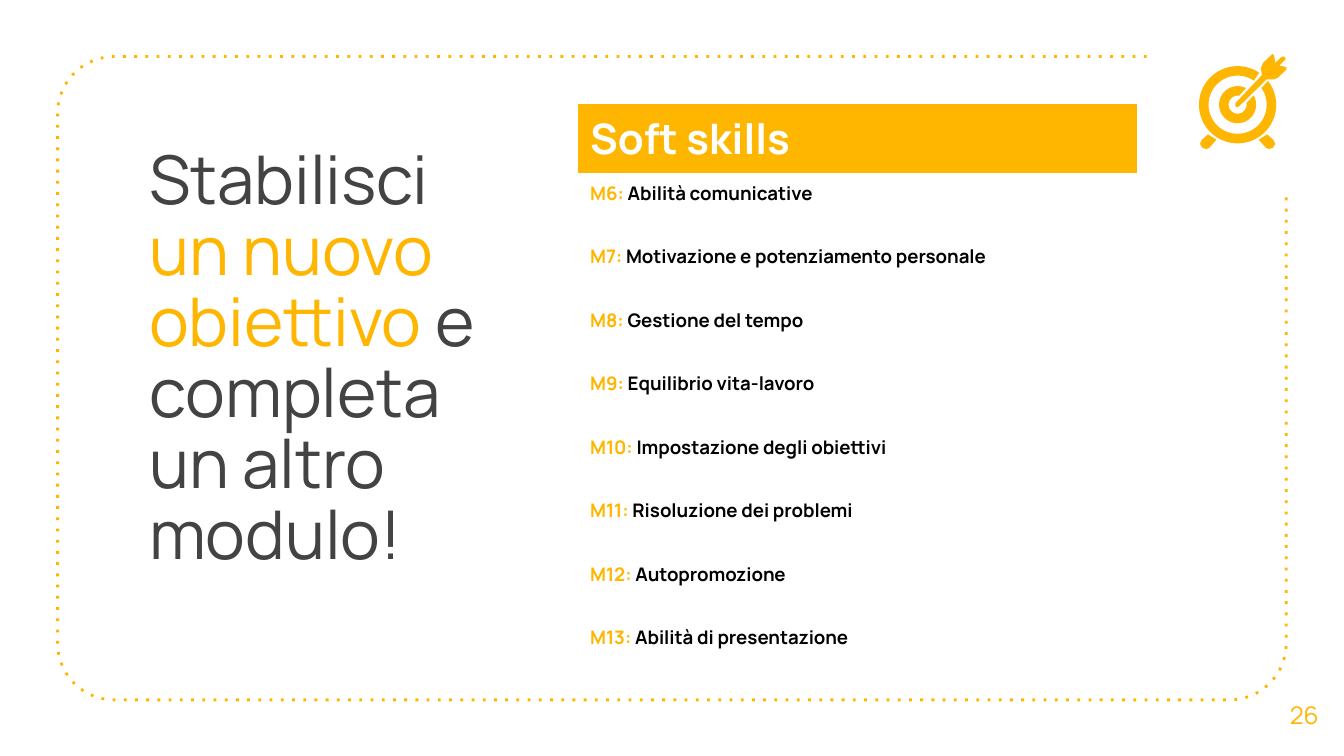
from math import cos, radians, sin

from lxml.etree import SubElement
from pptx import Presentation
from pptx.dml.color import RGBColor as RGB
from pptx.enum.text import MSO_ANCHOR as ANCHOR, PP_ALIGN as ALIGN
from pptx.oxml.ns import qn
from pptx.util import Cm, Pt

COLORS = {"accent": "FFB600", "text": "434343", "black": "000000", "white": "FFFFFF"}
FONT = "Manrope"

MODULES = [
    "Abilità comunicative",
    "Motivazione e potenziamento personale",
    "Gestione del tempo",
    "Equilibrio vita-lavoro",
    "Impostazione degli obiettivi",
    "Risoluzione dei problemi",
    "Autopromozione",
    "Abilità di presentazione",
]
FIRST_MODULE = 6

TARGET = (23.39, 1.98)
FOOT = [(-.56, .56), (-.68, .67), (-.71, .74), (-.67, .81),
        (-.59, .84), (-.53, .81), (-.4, .66)]
ARROW = [(.66, -.96), (.48, -.79), (.44, -.69), (.46, -.56), (-.04, -.03),
         (-.04, .02), (-.01, .05), (.03, .03), (.55, -.48), (.69, -.48),
         (.76, -.51), (.92, -.66), (.92, -.71), (.79, -.74), (.91, -.86),
         (.89, -.91), (.84, -.91), (.71, -.79), (.69, -.93)]


def color(name):
    return RGB.from_string(COLORS[name])


def arc(cx, cy, radius, start, end, steps):
    angles = [radians(start + (end - start) * i / steps) for i in range(steps + 1)]
    return [(cx + radius * cos(a), cy - radius * sin(a)) for a in angles]


def add_outline(slide, points, close=True):
    first, *rest = [(Cm(x), Cm(y)) for x, y in points]
    builder = slide.shapes.build_freeform(*first)
    builder.add_line_segments(rest, close=close)
    sp = builder.convert_to_shape()
    sp.shadow.inherit = False
    return sp


def add_frame(slide):
    left, top, right, bottom, radius = 1.09, 1.07, 24.31, 13.23, 1.07
    points = [(21.67, top)]
    points += arc(left + radius, top + radius, radius, 90, 180, 16)
    points += arc(left + radius, bottom - radius, radius, 180, 270, 16)
    points += arc(right - radius, bottom - radius, radius, 270, 360, 16)
    points += [(right, 3.71)]
    sp = add_outline(slide, points, close=False)
    sp.fill.background()
    sp.line.color.rgb = color("accent")
    sp.line.width = Pt(1.5)
    ln = sp._element.spPr.find(qn("a:ln"))
    SubElement(ln, qn("a:prstDash")).set("val", "dot")


def add_icon_part(slide, points):
    sp = add_outline(slide, points)
    sp.fill.solid()
    sp.fill.fore_color.rgb = color("accent")
    sp.line.fill.background()


def add_ring(slide, outer, inner, outer_gap, inner_gap):
    (a, b), (c, d) = outer_gap, inner_gap
    points = arc(*TARGET, outer, b, a + 360, 60)
    points += arc(*TARGET, inner, c + 360, d, 60)
    add_icon_part(slide, points)


def add_target_icon(slide):
    cx, cy = TARGET
    add_ring(slide, .73, .55, (38, 56), (35, 56))
    add_ring(slide, .35, .17, (30, 63), (10, 81))
    for side in (1, -1):
        add_icon_part(slide, [(cx + side * x, cy + y) for x, y in FOOT])
    add_icon_part(slide, [(cx + x, cy + y) for x, y in ARROW])


def write_runs(p, runs, size, bold=False):
    for text, name in runs:
        r = p.add_run()
        r.text = text
        r.font.name = FONT
        r.font.size = Pt(size)
        r.font.bold = bold
        r.font.color.rgb = color(name)


def add_text(slide, left, top, width, height, runs, size):
    tf = slide.shapes.add_textbox(Cm(left), Cm(top), Cm(width), Cm(height)).text_frame
    tf.word_wrap = True
    tf.margin_left = tf.margin_right = tf.margin_top = tf.margin_bottom = Cm(0.25)
    write_runs(tf.paragraphs[0], runs, size)
    return tf


def add_module_table(slide):
    header, row, width = 1.34, 1.2, 10.61
    count = len(MODULES)
    frame = slide.shapes.add_table(count + 1, 1, Cm(10.9), Cm(1.95),
                                   Cm(width), Cm(header + row * count))
    table = frame.table
    table.first_row = table.horz_banding = False
    for i, table_row in enumerate(table.rows):
        table_row.height = Cm(row if i else header)
    title, *cells = [table.cell(i, 0) for i in range(count + 1)]
    title.fill.solid()
    title.fill.fore_color.rgb = color("accent")
    write_runs(title.text_frame.paragraphs[0], [("Soft skills", "white")], 22.5, True)
    for number, (cell, name) in enumerate(zip(cells, MODULES), FIRST_MODULE):
        cell.fill.background()
        runs = [(f"M{number}: ", "accent"), (name, "black")]
        write_runs(cell.text_frame.paragraphs[0], runs, 10, True)


def main():
    prs = Presentation()
    prs.slide_width, prs.slide_height = Cm(25.4), Cm(14.29)
    slide = prs.slides.add_slide(prs.slide_layouts[6])
    add_frame(slide)
    title = add_text(slide, 2.57, 2.54, 7.5, 2.39, [
        ("Stabilisci ", "text"),
        ("un nuovo obiettivo ", "accent"),
        ("e completa un altro modulo!", "text"),
    ], 36)
    title.paragraphs[0].line_spacing = 0.88
    number = add_text(slide, 23.9, 12.75, 1.5, 1.52, [("26", "accent")], 13)
    number.vertical_anchor = ANCHOR.MIDDLE
    number.paragraphs[0].alignment = ALIGN.CENTER
    add_target_icon(slide)
    add_module_table(slide)
    prs.save("out.pptx")


if __name__ == "__main__":
    main()
